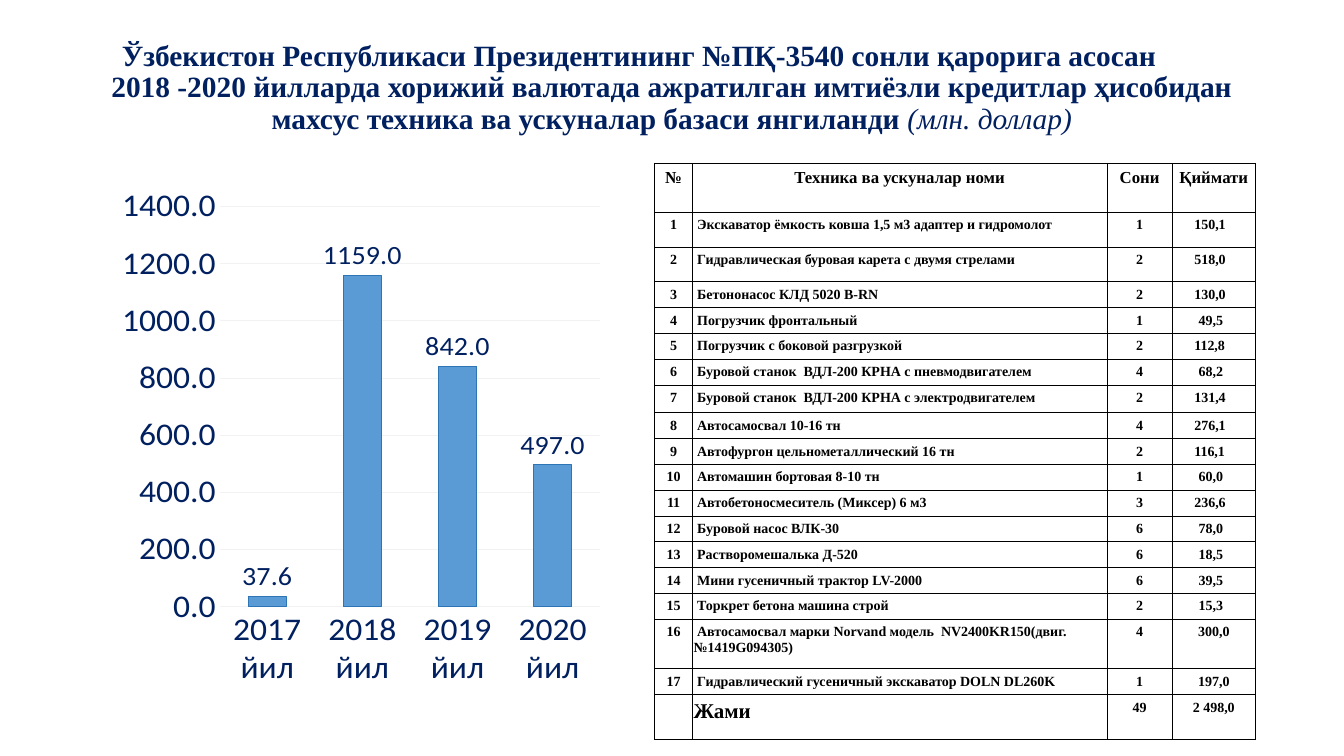
from lxml.etree import SubElement
from pptx import Presentation
from pptx.chart.data import CategoryChartData as ChartData
from pptx.dml.color import RGBColor as Rgb
from pptx.enum.chart import XL_CHART_TYPE as ChartKind
from pptx.enum.chart import XL_LABEL_POSITION as LabelPlace
from pptx.enum.chart import XL_TICK_MARK as Tick
from pptx.enum.text import MSO_ANCHOR as Anchor
from pptx.enum.text import PP_ALIGN as Align
from pptx.oxml.ns import qn
from pptx.util import Cm, Pt

COLORS = {"navy": "002060", "black": "000000", "white": "FFFFFF",
          "bar": "5B9BD5", "bar_edge": "2E75B6", "grid": "F2F2F2"}

TITLE_TOP = "Ўзбекистон Республикаси Президентининг №ПҚ-3540 сонли қарорига асосан"
TITLE_REST = ("2018 -2020 йилларда хорижий валютада ажратилган имтиёзли кредитлар "
              "ҳисобидан махсус техника ва ускуналар базаси янгиланди ")
TITLE_UNIT = "(млн. доллар)"

CREDITS = {"2017 йил": 37.6, "2018 йил": 1159, "2019 йил": 842, "2020 йил": 497}

HEADER = ("№", "Техника ва ускуналар номи", "Сони", "Қиймати")
MACHINES = [
    ("Экскаватор ёмкость ковша 1,5 м3 адаптер и гидромолот", 1, "150,1"),
    ("Гидравлическая буровая карета с двумя стрелами", 2, "518,0"),
    ("Бетононасос КЛД 5020 В-RN", 2, "130,0"),
    ("Погрузчик фронтальный", 1, "49,5"),
    ("Погрузчик с боковой разгрузкой", 2, "112,8"),
    ("Буровой станок  ВДЛ-200 КРНА с пневмодвигателем", 4, "68,2"),
    ("Буровой станок  ВДЛ-200 КРНА с электродвигателем", 2, "131,4"),
    ("Автосамосвал 10-16 тн", 4, "276,1"),
    ("Автофургон цельнометаллический 16 тн", 2, "116,1"),
    ("Автомашин бортовая 8-10 тн", 1, "60,0"),
    ("Автобетоносмеситель (Миксер) 6 м3", 3, "236,6"),
    ("Буровой насос ВЛК-30", 6, "78,0"),
    ("Растворомешалька Д-520", 6, "18,5"),
    ("Мини гусеничный трактор LV-2000", 6, "39,5"),
    ("Торкрет бетона машина строй", 2, "15,3"),
    ("Автосамосвал марки Norvand модель  NV2400KR150(двиг.№1419G094305)", 4, "300,0"),
    ("Гидравлический гусеничный экскаватор DOLN DL260K", 1, "197,0"),
]
TOTAL = ("", "Жами", "49", "2 498,0")

COLUMN_WIDTHS = (0.95, 10.45, 1.64, 2.1)
ROW_HEIGHT = 0.65
TALL_ROWS = {0: 1.24, 1: 0.88, 2: 0.87, 7: 0.7, 16: 1.25, 18: 1.14}


class SlideMaker:
    """Holds the style and the current slide."""
    serif, sans = "Times New Roman", "Calibri"

    def __init__(self, page):
        self.page = page

    def color(self, name):
        return Rgb.from_string(COLORS[name])

    def style_font(self, font, name, size, color, bold=False, italic=False):
        font.name, font.size = name, Pt(size)
        font.bold, font.italic = bold, italic
        font.color.rgb = self.color(color)

    def add_span(self, para, text, size, color, bold=True, italic=False):
        span = para.add_run()
        span.text = text
        self.style_font(span.font, self.serif, size, color, bold, italic)

    def set_indent(self, para, left=0.0, first=0.0):
        props = para._p.get_or_add_pPr()
        props.set("marL", str(Cm(left)))
        props.set("indent", str(Cm(first)))

    def add_title(self, left, top, width, height):
        box = self.page.shapes.add_textbox(Cm(left), Cm(top), Cm(width), Cm(height))
        frame = box.text_frame
        frame.word_wrap = True
        frame.vertical_anchor = Anchor.MIDDLE
        upper, lower = frame.paragraphs[0], frame.add_paragraph()
        upper.alignment, lower.alignment = Align.LEFT, Align.CENTER
        upper.line_spacing = lower.line_spacing = 0.9
        self.set_indent(upper, left=0.69)
        self.add_span(upper, TITLE_TOP, 21, "navy")
        self.add_span(lower, TITLE_REST, 21, "navy")
        self.add_span(lower, TITLE_UNIT, 21, "navy", bold=False, italic=True)

    def add_column_chart(self, values, left, top, width, height):
        data = ChartData(number_format="0.0")
        data.categories = list(values)
        data.add_series("Series 1", list(values.values()))
        chart = self.page.shapes.add_chart(
            ChartKind.COLUMN_CLUSTERED, Cm(left), Cm(top), Cm(width), Cm(height), data).chart
        chart.has_legend = chart.has_title = False
        self.style_font(chart.font, self.sans, 24, "navy")

        # Axes
        for axis in (chart.category_axis, chart.value_axis):
            axis.major_tick_mark = axis.minor_tick_mark = Tick.NONE
            axis.format.line.fill.background()
            self.style_font(axis.tick_labels.font, self.sans, 24, "navy")
        scale = chart.value_axis
        scale.minimum_scale, scale.maximum_scale, scale.major_unit = 0, 1400, 200
        scale.tick_labels.number_format = "0.0"
        scale.tick_labels.number_format_is_linked = False
        grid = scale.major_gridlines.format.line
        grid.color.rgb, grid.width = self.color("grid"), Pt(0.75)

        # Bars and their labels
        plot = chart.plots[0]
        plot.gap_width, plot.vary_by_categories = 150, False
        bars = plot.series[0].format
        bars.fill.solid()
        bars.fill.fore_color.rgb = self.color("bar")
        bars.line.color.rgb, bars.line.width = self.color("bar_edge"), Pt(0.75)
        plot.has_data_labels = True
        labels = plot.data_labels
        labels.show_value, labels.position = True, LabelPlace.OUTSIDE_END
        labels.number_format, labels.number_format_is_linked = "0.0", False
        self.style_font(labels.font, self.sans, 20, "navy")

        # Place of the plot inside the chart
        area = chart._chartSpace.chart.plotArea
        for old in area.findall(qn("c:layout")):
            area.remove(old)
        layout = SubElement(area, qn("c:layout"))
        area.insert(0, layout)
        manual = SubElement(layout, qn("c:manualLayout"))
        for tag, value in (("layoutTarget", "inner"), ("xMode", "edge"), ("yMode", "edge"),
                           ("x", 0.25), ("y", 0.035), ("w", 0.75), ("h", 0.854)):
            SubElement(manual, qn("c:" + tag)).set("val", str(value))

    def fill_cell(self, cell, text, size, align, left=0.0, first=0.0):
        cell.margin_left = cell.margin_right = Cm(0.03)
        cell.margin_top, cell.margin_bottom = Cm(0.13), Cm(0.06)
        props = cell._tc.get_or_add_tcPr()
        for side in ("lnL", "lnR", "lnT", "lnB"):
            edge = SubElement(props, qn("a:" + side), w=str(Pt(0.5)))
            paint = SubElement(edge, qn("a:solidFill"))
            SubElement(paint, qn("a:srgbClr"), val=COLORS["black"])
        cell.fill.solid()
        cell.fill.fore_color.rgb = self.color("white")
        para = cell.text_frame.paragraphs[0]
        para.alignment = align
        if left or first:
            self.set_indent(para, left, first)
        if text:
            self.add_span(para, text, size, "black")

    def add_machine_table(self, left, top):
        count = len(MACHINES) + 2
        heights = [TALL_ROWS.get(row, ROW_HEIGHT) for row in range(count)]
        table = self.page.shapes.add_table(
            count, len(HEADER), Cm(left), Cm(top),
            Cm(sum(COLUMN_WIDTHS)), Cm(sum(heights))).table
        table.first_row = table.horz_banding = False
        for column, width in zip(table.columns, COLUMN_WIDTHS):
            column.width = Cm(width)
        for row, height in zip(table.rows, heights):
            row.height = Cm(height)

        # Header and total
        for column, text in enumerate(HEADER):
            self.fill_cell(table.cell(0, column), text, 12, Align.CENTER)
        for column, text in enumerate(TOTAL):
            is_name = column == 1
            self.fill_cell(table.cell(count - 1, column), text, 15 if is_name else 10,
                           Align.LEFT if is_name else Align.CENTER)

        # One row for each machine; the last two prices are centred
        for number, (name, amount, price) in enumerate(MACHINES, 1):
            self.fill_cell(table.cell(number, 0), str(number), 10, Align.CENTER)
            self.fill_cell(table.cell(number, 1), name, 10, Align.LEFT, first=0.09)
            self.fill_cell(table.cell(number, 2), str(amount), 10, Align.CENTER)
            if number > 15:
                self.fill_cell(table.cell(number, 3), price, 10, Align.CENTER)
            else:
                indent = 0.53 if len(price) == 5 else 0.64
                self.fill_cell(table.cell(number, 3), price, 10, Align.LEFT, left=indent)


def main():
    deck = Presentation()
    deck.slide_width, deck.slide_height = Cm(33.87), Cm(19.05)
    maker = SlideMaker(deck.slides.add_slide(deck.slide_layouts[6]))
    maker.add_title(2.13, 0.53, 29.6, 3.4)
    maker.add_column_chart(CREDITS, 2.34, 4.72, 12.8, 12.6)
    maker.add_machine_table(16.5, 4.11)
    deck.save("out.pptx")


if __name__ == "__main__":
    main()
